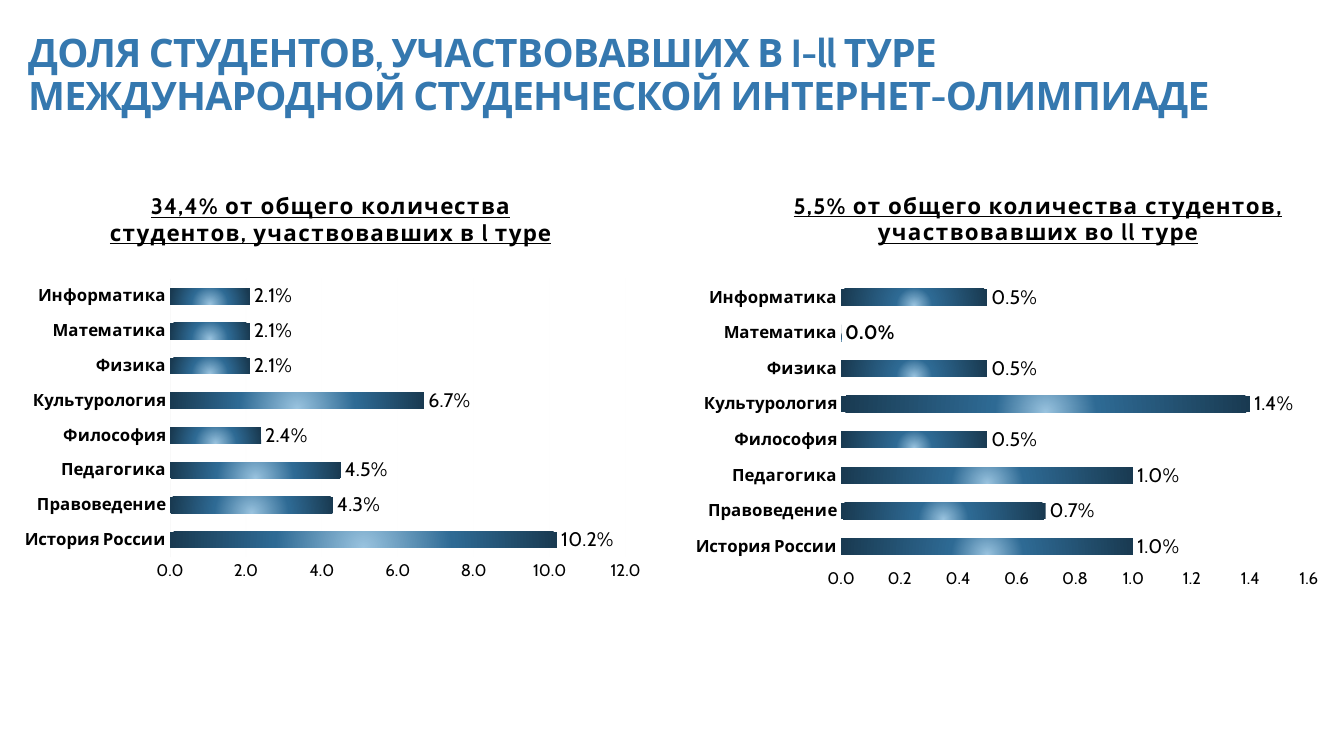
from pptx import Presentation
from pptx.chart.data import CategoryChartData
from pptx.dml.color import RGBColor
from pptx.enum.chart import XL_CHART_TYPE, XL_LABEL_POSITION, XL_TICK_MARK
from pptx.enum.text import MSO_ANCHOR
from pptx.oxml import parse_xml
from pptx.oxml.ns import nsdecls, qn
from pptx.util import Pt

BAR = XL_CHART_TYPE.BAR_CLUSTERED
OUTSIDE_END = XL_LABEL_POSITION.OUTSIDE_END
NO_TICK = XL_TICK_MARK.NONE
TOP = MSO_ANCHOR.TOP

SUBJECTS = ["История России", "Правоведение", "Педагогика", "Философия",
            "Культурология", "Физика", "Математика", "Информатика"]
FIRST_ROUND = [10.2, 4.3, 4.5, 2.4, 6.7, 2.1, 2.1, 2.1]
SECOND_ROUND = [1.0, 0.7, 1.0, 0.5, 1.4, 0.5, 0, 0.5]


def color(value):
    """Turn a hex string into a colour."""
    return RGBColor.from_string(value)


def set_layout(element, index, **places):
    """Give a chart part a manual place in fractions of the chart."""
    for old in element.findall(qn("c:layout")):
        element.remove(old)
    target = '<c:layoutTarget val="inner"/>' if "w" in places else ""
    modes = "".join(f'<c:{name}Mode val="edge"/>' for name in "xy")
    values = "".join(f'<c:{name} val="{value}"/>' for name, value in places.items())
    element.insert(index, parse_xml(
        f'<c:layout {nsdecls("c")}><c:manualLayout>{target}{modes}{values}'
        "</c:manualLayout></c:layout>"))


class Slide:
    """Hold the style and the page being filled."""

    font = "Cabin"
    ink = "000000"
    heading_color = "3578AF"
    bar_colors = ("99C3DF", "2E6A94", "193A51")

    def __init__(self, deck):
        """Add a blank page to the deck."""
        self.page = deck.slides.add_slide(deck.slide_layouts[6])

    def style(self, font, size, bold=False, ink=None):
        """Apply the house style to a font."""
        font.name = self.font
        font.size = Pt(size)
        font.bold = bold
        font.color.rgb = color(ink or self.ink)

    def heading(self, text, left, top, width, height):
        """Write the page heading."""
        box = self.page.shapes.add_textbox(Pt(left), Pt(top), Pt(width), Pt(height))
        frame = box.text_frame
        frame.word_wrap = True
        frame.vertical_anchor = TOP
        frame.margin_top = Pt(5)
        para = frame.paragraphs[0]
        para.line_spacing = 0.9
        span = para.add_run()
        span.text = text
        self.style(span.font, 28, True, self.heading_color)
        span.font._element.set("spc", "-50")

    def bar_chart(self, values, place, top_value, step, middle_stop, axis_line, grid):
        """Add a bar chart of the subjects and return it."""
        data = CategoryChartData(number_format="0.0")
        data.categories = SUBJECTS
        data.add_series("Series 1", values)
        chart = self.page.shapes.add_chart(BAR, *map(Pt, place), data).chart
        self.style(chart.font, 12)
        chart.has_legend = False
        self.axes(chart, top_value, step, axis_line, grid)
        plot = chart.plots[0]
        plot.gap_width = 115
        plot.vary_by_categories = False
        self.gradient(plot.series[0], middle_stop)
        labels = plot.series[0].data_labels
        labels.show_value = True
        labels.number_format = '0.0"%"'
        labels.number_format_is_linked = False
        labels.position = OUTSIDE_END
        self.style(labels.font, 14)
        return chart

    def axes(self, chart, top_value, step, axis_line, grid):
        """Scale and style both axes."""
        subjects, shares = chart.category_axis, chart.value_axis
        for axis in (subjects, shares):
            axis.major_tick_mark = axis.minor_tick_mark = NO_TICK
            self.style(axis.tick_labels.font, 12, axis is subjects)
        subjects.format.line.color.rgb = color(axis_line)
        shares.format.line.fill.background()
        shares.minimum_scale = 0
        shares.maximum_scale = top_value
        shares.major_unit = step
        shares.tick_labels.number_format = "0.0"
        shares.tick_labels.number_format_is_linked = False
        shares.major_gridlines.format.line.color.rgb = color(grid)
        shares.major_gridlines.format.line.width = Pt(0.75)

    def gradient(self, series, middle_stop):
        """Fill the bars with a round glow from below."""
        stops = "".join(
            f'<a:gs pos="{stop * 1000}"><a:srgbClr val="{value}"/></a:gs>'
            for stop, value in zip((0, middle_stop, 100), self.bar_colors))
        series.invert_if_negative = False
        series.format.line.fill.background()
        series._element.get_or_add_spPr().insert(0, parse_xml(
            f'<a:gradFill {nsdecls("a")}><a:gsLst>{stops}</a:gsLst><a:path path="circle">'
            '<a:fillToRect l="50000" t="130000" r="50000" b="-30000"/></a:path></a:gradFill>'))

    def chart_title(self, chart, text, left, top):
        """Write an underlined, spaced title above a chart."""
        frame = chart.chart_title.text_frame
        frame.text = text
        for para in frame.paragraphs:
            for span in para.runs:
                self.style(span.font, 16, True)
                span.font.underline = True
                span.font._element.set("spc", "100")
        chart.chart_title.include_in_layout = False
        set_layout(chart.chart_title._element, 1, x=left, y=top)

    def bold_label(self, chart, index):
        """Make one value label bold and leave it without a percent sign."""
        label = chart.plots[0].series[0].points[index].data_label
        self.style(label.font, 14, True)
        label.position = OUTSIDE_END


def main():
    """Build the slide and save it."""
    deck = Presentation()
    deck.slide_width, deck.slide_height = Pt(960), Pt(540)
    slide = Slide(deck)
    first = slide.bar_chart(FIRST_ROUND, (13, 131.8, 452, 306), 12, 2, 46, "F9F9F9", "FEFEFE")
    slide.chart_title(first, "34,4% от общего количества\nстудентов, участвовавших в l туре",
                      0.14, 0.01)
    set_layout(first._chartSpace.chart.plotArea, 0, x=0.24, y=0.22, w=0.72, h=0.65)
    second = slide.bar_chart(SECOND_ROUND, (492.5, 131.8, 451.5, 295), 1.6, 0.2, 25,
                             "FFFFFF", "FFFFFF")
    slide.chart_title(second, "5,5% от общего количества студентов,\nучаствовавших во ll туре",
                      0.16, 0.01)
    set_layout(second._chartSpace.chart.plotArea, 0, x=0.24, y=0.23, w=0.74, h=0.69)
    slide.bold_label(second, SUBJECTS.index("Математика"))
    slide.heading("ДОЛЯ СТУДЕНТОВ, УЧАСТВОВАВШИХ В I-ll ТУРЕ МЕЖДУНАРОДНОЙ "
                  "СТУДЕНЧЕСКОЙ ИНТЕРНЕТ-ОЛИМПИАДЕ", 13, 19.4, 922, 93.6)
    deck.save("out.pptx")


if __name__ == "__main__":
    main()
